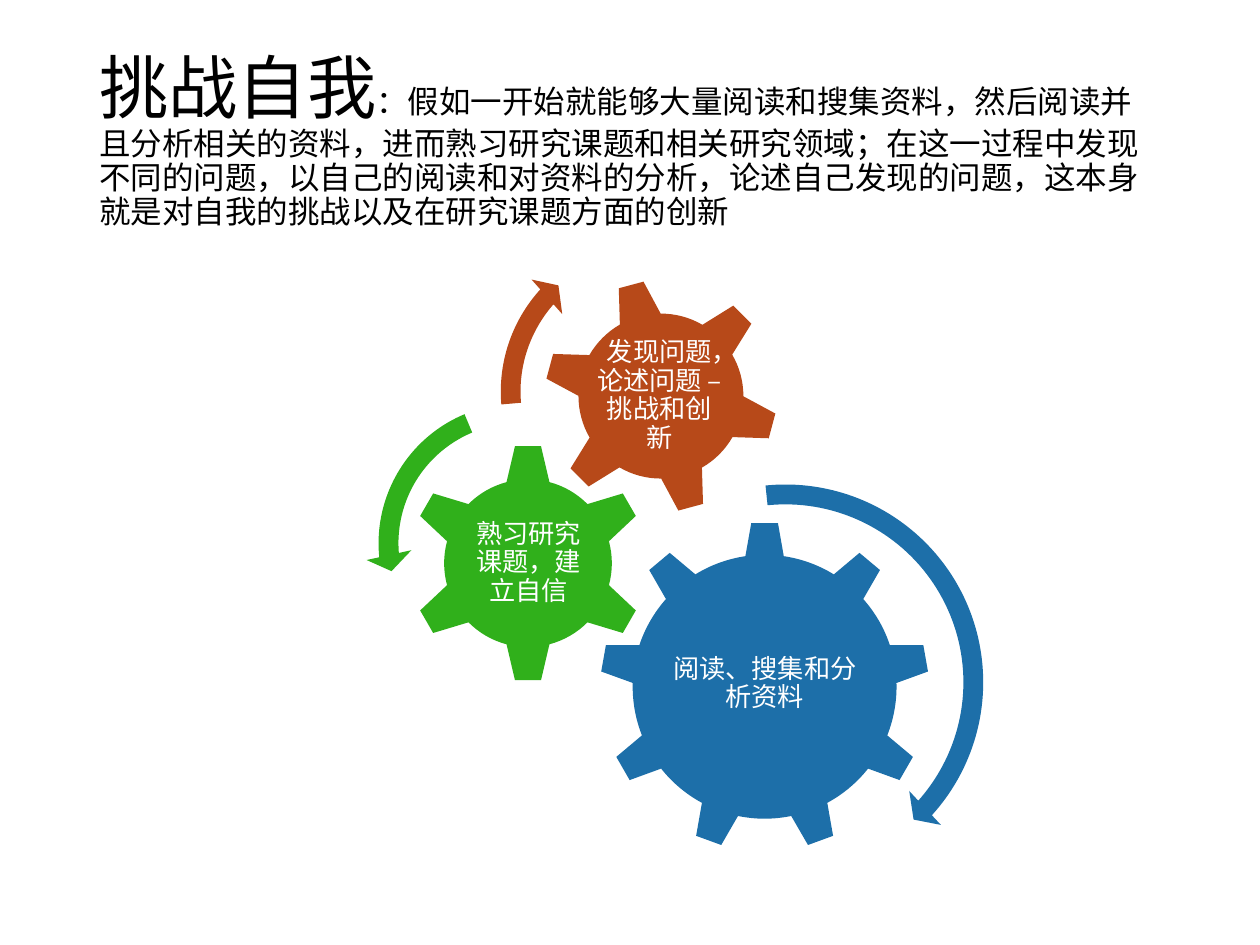
from pptx import Presentation, util as u
from pptx.dml.color import RGBColor
from pptx.enum import shapes, text

FONT = "Times New Roman"
KIND = shapes.MSO_SHAPE
BLUE, GREEN, RUST = "1D6FA9", "30B01B", "B74919"

TITLE = [
    ("挑战自我", 39.6),
    ("：假如一开始就能够大量阅读和搜集资料，然后阅读并且分析相关的资料，"
     "进而熟习研究课题和相关研究领域；在这一过程中发现不同的问题，"
     "以自己的阅读和对资料的分析，论述自己发现的问题，"
     "这本身就是对自我的挑战以及在研究课题方面的创新", 18),
]
GEARS = [
    ("阅读、搜集和分析资料", KIND.GEAR_9, BLUE, (12.09, 10.52, 6.65), 0,
     (13.44, 12.07, 3.96, 3.43)),
    ("熟习研究课题，建立自信", KIND.GEAR_6, GREEN, (8.23, 8.94, 4.83), 0,
     (9.45, 10.16, 2.41, 2.39)),
    ("发现问题，论述问题 – 挑战和创新", KIND.GEAR_6, RUST, (10.95, 5.61, 4.75), 345,
     (11.96, 6.65, 2.67, 2.67)),
]
ARROWS = [
    (KIND.CIRCULAR_ARROW, BLUE, (11.58, 9.5, 8.51),
     (0.047, 2.99, 25.198, 158.534, 0.055)),
    (KIND.LEFT_CIRCULAR_ARROW, GREEN, (7.37, 7.87, 6.17),
     (0.065, 4.3, 104.891, 148.378, 0.075)),
    (KIND.CIRCULAR_ARROW, RUST, (9.83, 4.57, 6.65),
     (0.06, 3.941, 133.138, 105.082, 0.07)),
]

deck = Presentation()
deck.slide_width, deck.slide_height = u.Cm(25.4), u.Cm(19.05)
slide = deck.slides.add_slide(deck.slide_layouts[6])


def color(code):
    return RGBColor.from_string(code)


def write(runs, box, ink="000000", align=text.PP_ALIGN.LEFT, pad=(0.25, 0.13)):
    frame = slide.shapes.add_textbox(*map(u.Cm, box)).text_frame
    frame.word_wrap = True
    frame.vertical_anchor = text.MSO_ANCHOR.MIDDLE
    frame.margin_left = frame.margin_right = u.Cm(pad[0])
    frame.margin_top = frame.margin_bottom = u.Cm(pad[1])
    para = frame.paragraphs[0]
    para.alignment = align
    para.line_spacing = 0.9
    for words, size in runs:
        run = para.add_run()
        run.text = words
        run.font.name = FONT
        run.font.size = u.Pt(size)
        run.font.color.rgb = color(ink)


def draw(kind, fill, place, turn=0, bends=()):
    left, top, side = map(u.Cm, place)
    shape = slide.shapes.add_shape(kind, left, top, side, side)
    shape.shadow.inherit = False
    shape.fill.solid()
    shape.fill.fore_color.rgb = color(fill)
    shape.line.fill.background()
    shape.rotation = turn
    for i, bend in enumerate(bends):
        shape.adjustments[i] = bend


write(TITLE, (1.75, 1.02, 21.89, 3.68))
for label, kind, fill, place, turn, box in GEARS:
    draw(kind, fill, place, turn=turn)
    write([(label, 15)], box, ink="FFFFFF", align=text.PP_ALIGN.CENTER, pad=(0.05, 0.05))
for kind, fill, place, bends in ARROWS:
    draw(kind, fill, place, bends=bends)

deck.save("out.pptx")
